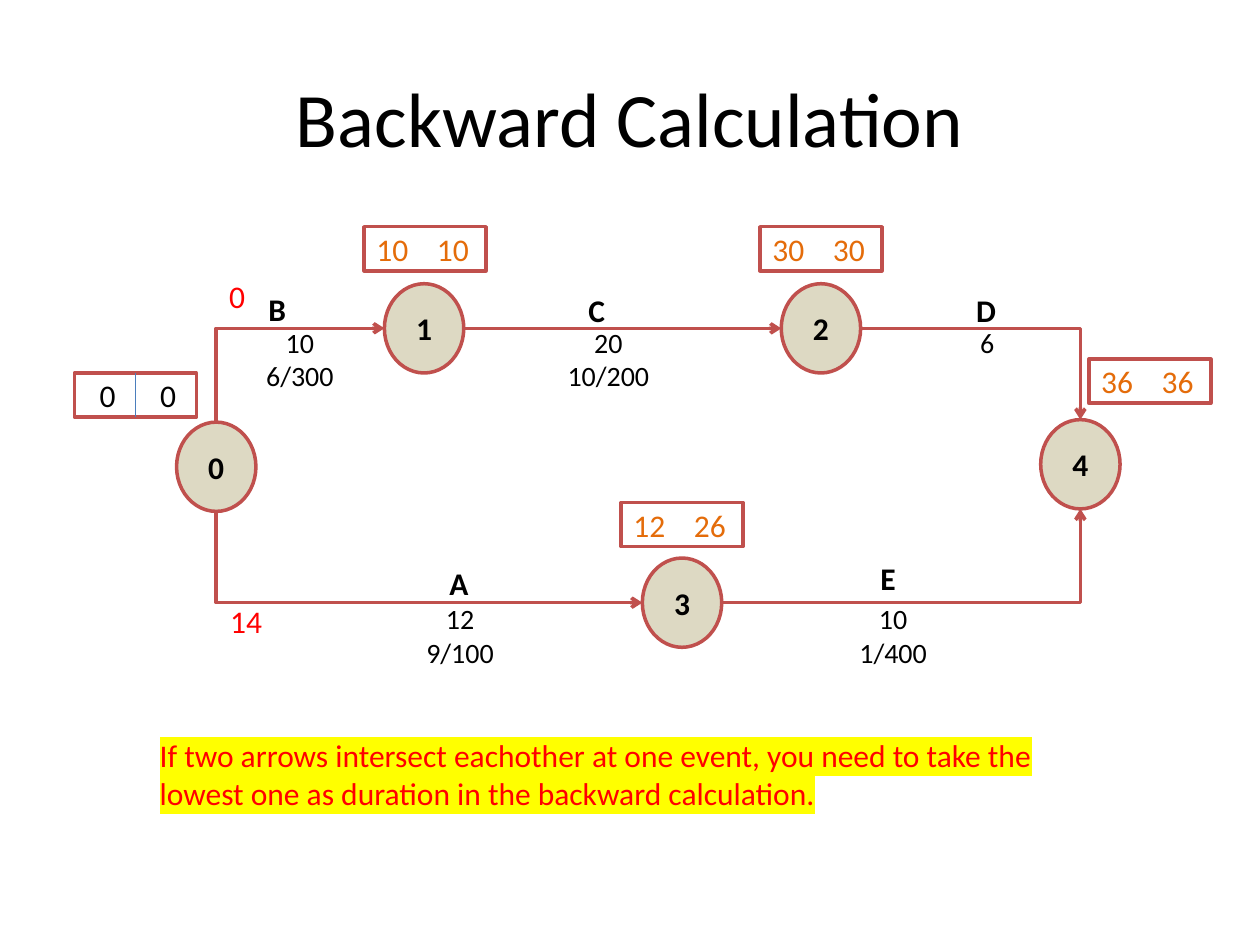
"""Build the slide showing the backward calculation of an arrow network."""
from dataclasses import dataclass

from lxml.etree import SubElement
from pptx import Presentation
from pptx.dml.color import RGBColor
from pptx.enum.shapes import MSO_CONNECTOR, MSO_SHAPE
from pptx.enum.text import MSO_ANCHOR, PP_ALIGN
from pptx.oxml.ns import qn
from pptx.util import Cm, Pt


@dataclass(frozen=True)
class Theme:
    font: str = "Calibri"
    text: str = "000000"
    time: str = "E46C0A"
    warning: str = "FF0000"
    highlight: str = "FFFF00"
    outline: str = "C0504D"
    divider: str = "4B7EBC"
    event_fill: str = "DDD9C3"
    time_fill: str = "FFFFFF"
    title_size: int = 44
    body_size: int = 18
    detail_size: int = 16
    line_width: float = 2
    divider_width: float = 0.75


@dataclass(frozen=True)
class Event:
    name: str
    x: float
    y: float


@dataclass(frozen=True)
class TimeBox:
    earliest: str
    latest: str
    left: float
    top: float
    color: str
    inset: float = 0.25


@dataclass(frozen=True)
class Label:
    text: str
    left: float
    top: float
    width: float
    height: float
    size: int
    color: str
    bold: bool = False
    align: PP_ALIGN = PP_ALIGN.LEFT


THEME = Theme()
EVENT_WIDTH, EVENT_HEIGHT = 1.6, 1.8
TIME_WIDTH, TIME_HEIGHT, TIME_TAB = 2.46, 0.89, 1.22

EVENTS = [
    Event("0", 4.36, 9.41),
    Event("1", 8.55, 6.62),
    Event("2", 16.55, 6.62),
    Event("3", 13.75, 12.15),
    Event("4", 21.78, 9.36),
]
START_BOX = TimeBox("0", "0", 1.5, 7.52, THEME.text, 0.51)
TIME_BOXES = [
    TimeBox("10", "10", 7.34, 4.57, THEME.time),
    TimeBox("30", "30", 15.32, 4.57, THEME.time),
    TimeBox("12", "26", 12.52, 10.13, THEME.time),
    TimeBox("36", "36", 21.95, 7.24, THEME.time),
]


def activity(name: str, left: float, top: float) -> Label:
    """Describe the bold letter above an arrow."""
    return Label(name, left, top, 1.35, 1.02, THEME.body_size, THEME.text, bold=True)


def detail(text: str, left: float, top: float) -> Label:
    """Describe the two centred lines below an arrow."""
    return Label(text, left, top, 2.59, 1.63, THEME.detail_size, THEME.text,
                 align=PP_ALIGN.CENTER)


LABELS = [
    activity("B", 5.16, 5.72),
    activity("E", 17.5, 11.15),
    activity("D", 19.43, 5.74),
    activity("C", 11.61, 5.74),
    activity("A", 8.81, 11.25),
    detail("10\v6/300", 4.75, 6.43),
    Label("6", 19.51, 6.43, 1.07, 0.94, THEME.detail_size, THEME.text),
    detail("10\v1/400", 16.71, 12.01),
    detail("12\v9/100", 7.98, 12.01),
    detail("20\v10/200", 10.97, 6.43),
    Label("0", 4.37, 5.46, 0.84, 1.02, THEME.body_size, THEME.warning),
    Label("14", 4.39, 12.01, 1.19, 1.02, THEME.body_size, THEME.warning),
]
NOTE = Label(
    "If two arrows intersect eachother at one event, you need to take the "
    "lowest one as duration in the backward calculation.",
    2.97, 14.71, 19.81, 1.8, THEME.body_size, THEME.warning,
)


def format_paragraph(paragraph, size: int, color: str, bold: bool = False,
                     align: PP_ALIGN = PP_ALIGN.LEFT) -> None:
    """Set the font and alignment of a paragraph."""
    paragraph.alignment = align
    paragraph.font.name = THEME.font
    paragraph.font.size = Pt(size)
    paragraph.font.bold = bold
    paragraph.font.color.rgb = RGBColor.from_string(color)


def format_line(line, color: str, width: float) -> None:
    """Set the colour and width of a line."""
    line.color.rgb = RGBColor.from_string(color)
    line.width = Pt(width)


def add_outlined(slide, kind: MSO_SHAPE, left: float, top: float, width: float,
                 height: float, fill: str):
    """Add a filled shape with the common outline."""
    shape = slide.shapes.add_shape(kind, Cm(left), Cm(top), Cm(width), Cm(height))
    shape.shadow.inherit = False
    shape.fill.solid()
    shape.fill.fore_color.rgb = RGBColor.from_string(fill)
    format_line(shape.line, THEME.outline, THEME.line_width)
    shape.text_frame.vertical_anchor = MSO_ANCHOR.MIDDLE
    return shape


def add_event(slide, event: Event) -> None:
    """Add a numbered event circle."""
    shape = add_outlined(slide, MSO_SHAPE.OVAL, event.x - EVENT_WIDTH / 2,
                         event.y - EVENT_HEIGHT / 2, EVENT_WIDTH, EVENT_HEIGHT,
                         THEME.event_fill)
    paragraph = shape.text_frame.paragraphs[0]
    paragraph.text = event.name
    format_paragraph(paragraph, THEME.body_size, THEME.text, True, PP_ALIGN.CENTER)


def add_time_box(slide, box: TimeBox):
    """Add the earliest and latest times, parted by a tab stop."""
    shape = add_outlined(slide, MSO_SHAPE.RECTANGLE, box.left, box.top, TIME_WIDTH,
                         TIME_HEIGHT, THEME.time_fill)
    shape.text_frame.margin_left = Cm(box.inset)
    paragraph = shape.text_frame.paragraphs[0]
    paragraph.text = f"{box.earliest}\t{box.latest}"
    tabs = SubElement(paragraph._p.get_or_add_pPr(), qn("a:tabLst"))
    SubElement(tabs, qn("a:tab"), pos=str(Cm(TIME_TAB)), algn="l")
    format_paragraph(paragraph, THEME.body_size, box.color)
    return shape


def add_line(slide, kind: MSO_CONNECTOR, start: tuple[float, float],
             end: tuple[float, float], color: str, width: float):
    """Add a connector without a shadow."""
    connector = slide.shapes.add_connector(kind, *map(Cm, start + end))
    format_line(connector.line, color, width)
    SubElement(connector._element.spPr, qn("a:effectLst"))
    return connector


def add_arrow(slide, start: tuple[float, float], end: tuple[float, float],
              vertical_first: bool = False) -> None:
    """Add a straight arrow, or one with a single right-angled bend."""
    (x1, y1), (x2, y2) = start, end
    bent = y1 != y2
    rotation = 0
    if vertical_first:
        rising = y2 < y1
        rotation = 90 if rising else 270
        middle_x, middle_y = (x1 + x2) / 2, (y1 + y2) / 2
        half_width, half_height = abs(y2 - y1) / 2, abs(x2 - x1) / 2
        if rising:
            half_height = -half_height
        start = (middle_x + half_width, middle_y - half_height)
        end = (middle_x - half_width, middle_y + half_height)
    kind = MSO_CONNECTOR.ELBOW if bent else MSO_CONNECTOR.STRAIGHT
    connector = add_line(slide, kind, start, end, THEME.outline, THEME.line_width)
    properties = connector._element.spPr
    if bent:
        properties.find(qn("a:prstGeom")).set("prst", "bentConnector2")
    if rotation:
        properties.find(qn("a:xfrm")).set("rot", str(rotation * 60000))
    SubElement(properties.find(qn("a:ln")), qn("a:tailEnd"), type="arrow")


def add_label(slide, label: Label):
    """Add a text box and return its paragraph."""
    box = slide.shapes.add_textbox(Cm(label.left), Cm(label.top), Cm(label.width),
                                   Cm(label.height))
    box.text_frame.word_wrap = True
    paragraph = box.text_frame.paragraphs[0]
    paragraph.text = label.text
    format_paragraph(paragraph, label.size, label.color, label.bold, label.align)
    return paragraph


def add_network(slide) -> None:
    """Add the events and the arrows between them."""
    for event in EVENTS:
        add_event(slide, event)
    first, upper_left, upper_right, lower, last = EVENTS
    half_width, half_height = EVENT_WIDTH / 2, EVENT_HEIGHT / 2
    add_arrow(slide, (upper_left.x + half_width, upper_left.y),
              (upper_right.x - half_width, upper_right.y))
    for side, target in ((-half_height, upper_left), (half_height, lower)):
        add_arrow(slide, (first.x, first.y + side),
                  (target.x - half_width, target.y), vertical_first=True)
    for side, source in ((-half_height, upper_right), (half_height, lower)):
        add_arrow(slide, (source.x + half_width, source.y), (last.x, last.y + side))


def main() -> None:
    """Build and save the presentation."""
    presentation = Presentation()
    presentation.slide_width, presentation.slide_height = Cm(25.4), Cm(19.05)
    slide = presentation.slides.add_slide(presentation.slide_layouts[5])
    title = slide.shapes.title
    title.left, title.top, title.width, title.height = map(Cm, (1.27, 0.76, 22.86, 3.18))
    title.text_frame.vertical_anchor = MSO_ANCHOR.MIDDLE
    title.text_frame.text = "Backward Calculation"
    format_paragraph(title.text_frame.paragraphs[0], THEME.title_size, THEME.text,
                     align=PP_ALIGN.CENTER)

    add_network(slide)
    start_box = add_time_box(slide, START_BOX)
    middle = START_BOX.left + TIME_WIDTH / 2
    divider = add_line(slide, MSO_CONNECTOR.STRAIGHT, (middle, START_BOX.top),
                       (middle, START_BOX.top + TIME_HEIGHT), THEME.divider,
                       THEME.divider_width)
    divider.begin_connect(start_box, 0)
    divider.end_connect(start_box, 2)
    for box in TIME_BOXES:
        add_time_box(slide, box)
    for label in LABELS:
        add_label(slide, label)

    note = add_label(slide, NOTE)
    marker = SubElement(note.runs[0]._r.get_or_add_rPr(), qn("a:highlight"))
    SubElement(marker, qn("a:srgbClr"), val=THEME.highlight)
    presentation.save("out.pptx")


if __name__ == "__main__":
    main()
